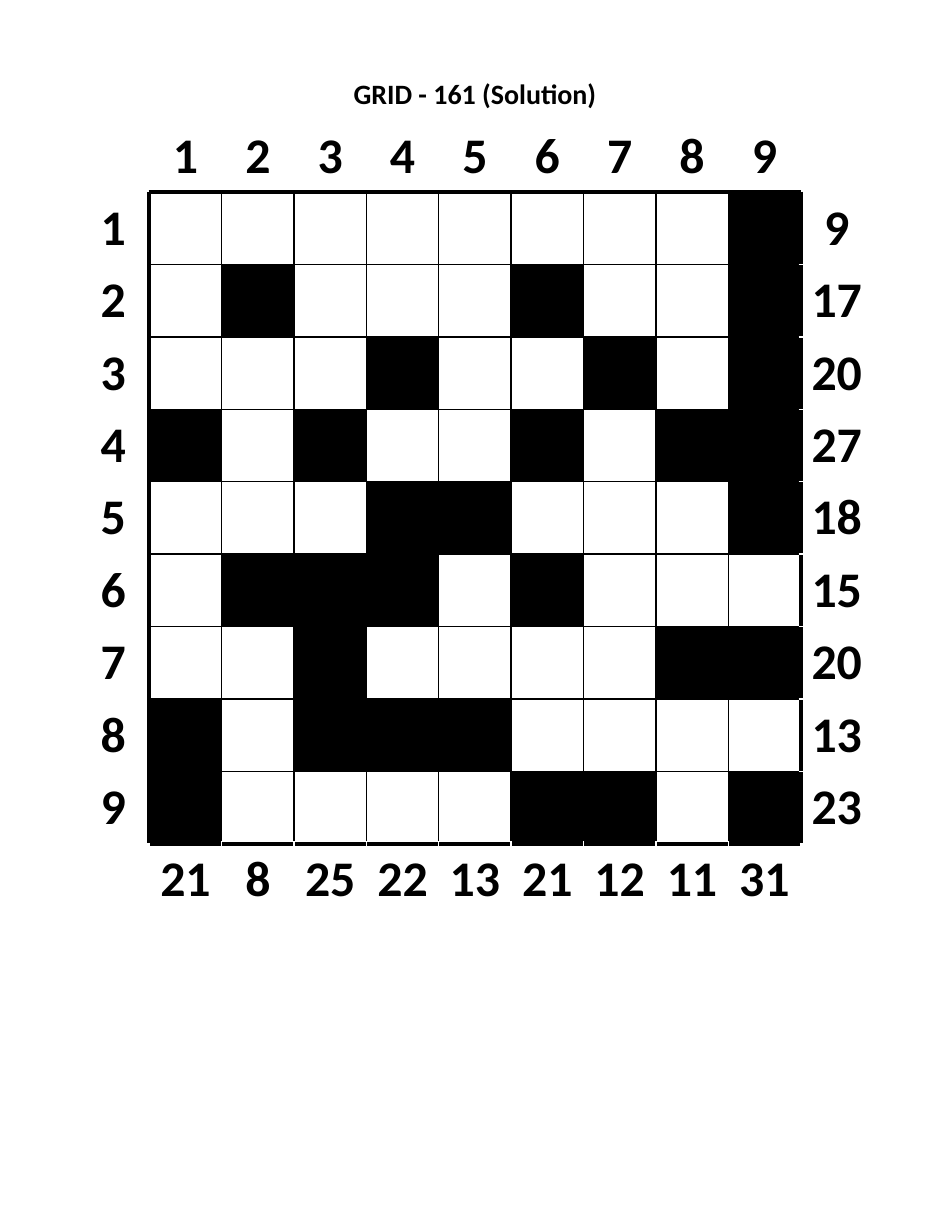
from dataclasses import dataclass

from lxml import etree
from pptx import Presentation
from pptx import util as u
from pptx.dml.color import RGBColor
from pptx.enum import text
from pptx.oxml.ns import qn

PX = u.Inches(1) // 112


@dataclass(frozen=True)
class Theme:
    font: str = "Calibri"
    black: str = "000000"
    white: str = "FFFFFF"
    title_size: int = 18
    number_size: int = 32
    thin: int = 1
    thick: int = 3


theme = Theme()

# "#" is a black square, "." a white one
PATTERN = [
    "........#",
    ".#...#..#",
    "...#..#.#",
    "#.#..#.##",
    "...##...#",
    ".###.#...",
    "..#....##",
    "#.###....",
    "#....##.#",
]
ROW_SUMS = [9, 17, 20, 27, 18, 15, 20, 13, 23]
COLUMN_SUMS = [21, 8, 25, 22, 13, 21, 12, 11, 31]
SIZE = len(PATTERN)
LAST = SIZE + 1


def write(frame, words, size, anchor):
    frame.margin_left = frame.margin_right = frame.margin_top = frame.margin_bottom = 0
    frame.vertical_anchor = anchor
    para = getattr(frame, "text_frame", frame).paragraphs[0]
    para.alignment = text.PP_ALIGN.CENTER
    span = para.add_run()
    span.text = str(words)
    span.font.name = theme.font
    span.font.size = u.Pt(size)
    span.font.bold = True
    span.font.color.rgb = RGBColor.from_string(theme.black)


def draw_border(cell, side, line, lane):
    """Rule one cell side; line counts grid lines, lane the row or column it crosses."""
    if not (1 <= line <= LAST and 1 <= lane <= SIZE):
        return
    weight = theme.thick if line in (1, LAST) else theme.thin
    properties = cell._tc.get_or_add_tcPr()
    border = etree.SubElement(properties, qn(f"a:ln{side}"), w=str(u.Pt(weight)))
    fill = etree.SubElement(border, qn("a:solidFill"))
    etree.SubElement(fill, qn("a:srgbClr"), val=theme.black)


deck = Presentation()
deck.slide_width = u.Inches(8.5)
deck.slide_height = u.Inches(11)
page = deck.slides.add_slide(deck.slide_layouts[5])

title = page.shapes.title
title.left, title.top, title.width, title.height = (
    n * PX for n in (77, 77, 796, 34)
)
title.text_frame.word_wrap = True
title.text_frame.auto_size = text.MSO_AUTO_SIZE.SHAPE_TO_FIT_TEXT
write(title.text_frame, "GRID - 161 (Solution)", theme.title_size, text.MSO_ANCHOR.TOP)

labels = {}
for i in range(1, SIZE + 1):
    labels[0, i] = labels[i, 0] = i
    labels[i, LAST] = ROW_SUMS[i - 1]
    labels[LAST, i] = COLUMN_SUMS[i - 1]

side_length = 796 * PX
count = SIZE + 2
grid = page.shapes.add_table(
    count, count, 77 * PX, 120 * PX, side_length, side_length
).table
grid.first_row = grid.horz_banding = False
for band in [*grid.columns]:
    band.width = side_length // count
for band in [*grid.rows]:
    band.height = side_length // count

for row in range(count):
    for column in range(count):
        cell = grid.cell(row, column)
        draw_border(cell, "L", column, row)
        draw_border(cell, "R", column + 1, row)
        draw_border(cell, "T", row, column)
        draw_border(cell, "B", row + 1, column)
        inside = 1 <= row <= SIZE and 1 <= column <= SIZE
        is_black = inside and PATTERN[row - 1][column - 1] == "#"
        cell.fill.solid()
        cell.fill.fore_color.rgb = RGBColor.from_string(
            theme.black if is_black else theme.white
        )
        if (row, column) in labels:
            write(cell, labels[row, column], theme.number_size, text.MSO_ANCHOR.MIDDLE)

deck.save("out.pptx")
